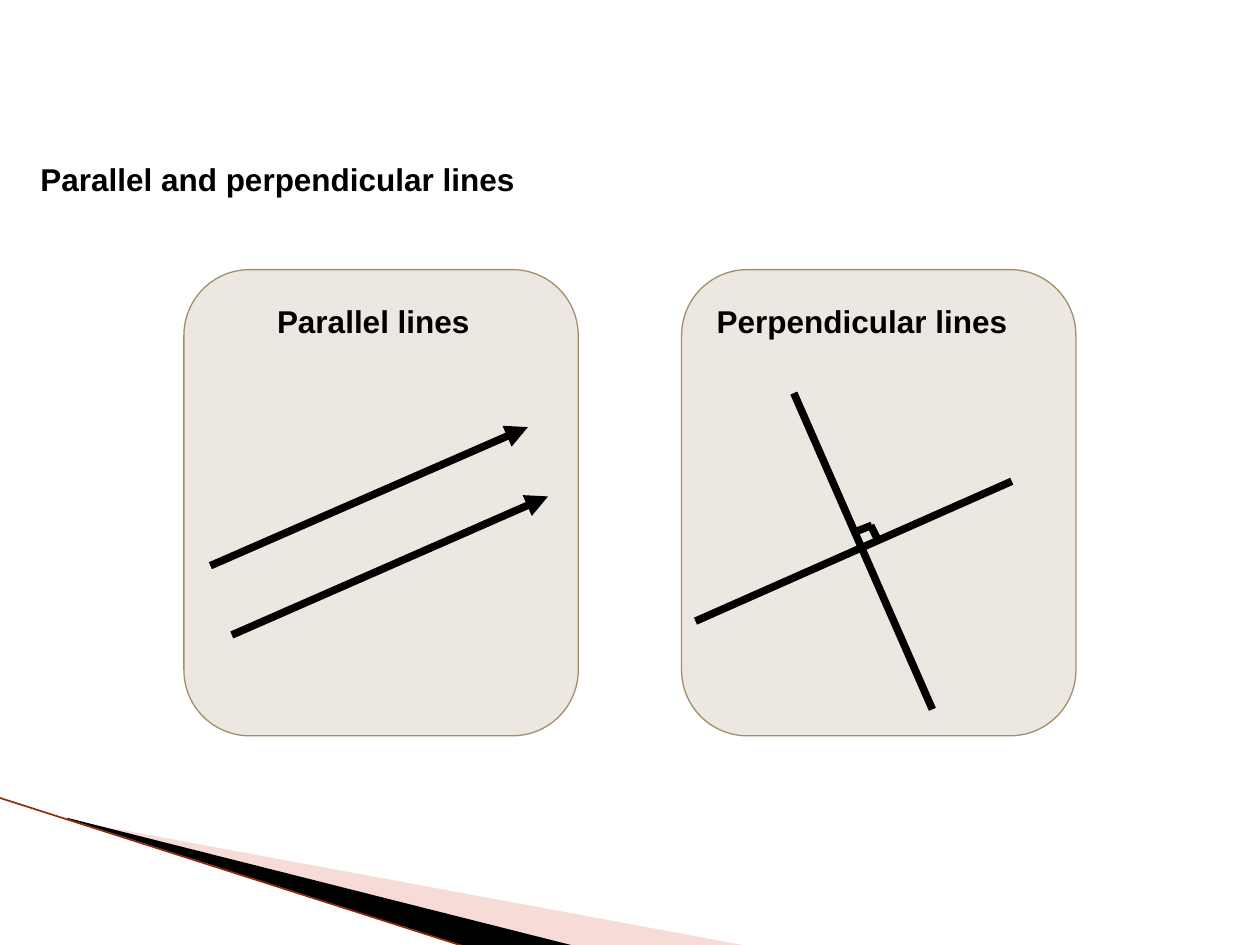
from dataclasses import dataclass

from lxml import etree
from pptx import Presentation
from pptx.dml.color import RGBColor
from pptx.enum import shapes, text
from pptx.oxml import ns
from pptx.util import Inches, Pt


@dataclass(frozen=True)
class Theme:
    ink: RGBColor = RGBColor.from_string("000000")
    card: RGBColor = RGBColor.from_string("ECE8E1")
    border: RGBColor = RGBColor.from_string("A28E6A")
    blush: RGBColor = RGBColor.from_string("E9A59D")
    rust: RGBColor = RGBColor.from_string("8E2B10")
    font: str = "Arial"
    label_size: Pt = Pt(18)
    thick: Pt = Pt(4.33)
    thin: Pt = Pt(0.75)
    edge: Pt = Pt(0.95)


THEME = Theme()


def set_all(target, values):
    for name, value in values.items():
        setattr(target, name, value)


def fill_label(shape, wording):
    frame = shape.text_frame
    set_all(frame, {
        "word_wrap": False,
        "auto_size": text.MSO_AUTO_SIZE.SHAPE_TO_FIT_TEXT,
        "vertical_anchor": text.MSO_ANCHOR.TOP,
    })
    para = frame.paragraphs[0]
    set_all(para, {"alignment": text.PP_ALIGN.LEFT, "line_spacing": 1.0, "space_before": Pt(0)})
    span = para.add_run()
    span.text = wording
    set_all(span.font, {"name": THEME.font, "size": THEME.label_size, "bold": True})
    span.font.color.rgb = THEME.ink


def add_line(parent, start, end, color, width, arrow=False):
    points = [Inches(value) for value in (*start, *end)]
    line = parent.add_connector(shapes.MSO_CONNECTOR.STRAIGHT, *points)
    line.line.color.rgb = color
    line.line.width = width
    if arrow:
        etree.SubElement(line.line._get_or_add_ln(), ns.qn("a:tailEnd"), type="triangle")
    etree.SubElement(line._element.spPr, ns.qn("a:effectLst"))


def add_wedge(page, points, color, opacity=100):
    corners = [(Inches(x), Inches(y)) for x, y in points]
    builder = page.shapes.build_freeform(*corners[0])
    builder.add_line_segments(corners[1:], close=True)
    wedge = builder.convert_to_shape()
    wedge.shadow.inherit = False
    wedge.fill.solid()
    wedge.fill.fore_color.rgb = color
    wedge.line.fill.background()
    if opacity < 100:
        tint = wedge._element.spPr.find(".//" + ns.qn("a:srgbClr"))
        etree.SubElement(tint, ns.qn("a:alpha"), val=str(opacity * 1000))


def add_corner_sweep(page, box):
    left, top, width, height = box
    right, bottom = left + width, top + height
    add_wedge(page, [(left + 0.56, top + 0.18), (right, bottom),
                     (right - 1.39, bottom), (left + 0.56, top + 0.17)], THEME.blush, 40)
    add_wedge(page, [(left + 0.54, top + 0.16), (right - 1.38, bottom),
                     (right - 2.23, bottom + 0.01), (left + 0.55, top + 0.17)], THEME.ink)
    add_line(page.shapes, (left, top), (right - 2.24, bottom + 0.01), THEME.rust, THEME.edge)


def add_heading(page, box, wording):
    title = page.shapes.title
    set_all(title, dict(zip(("left", "top", "width", "height"), map(Inches, box))))
    fill_label(title, wording)


def add_card(page, box, wording, label_left, label_width, strokes, arrow=False):
    left, top = box[:2]
    group = page.shapes.add_group_shape().shapes
    card = group.add_shape(shapes.MSO_SHAPE.ROUNDED_RECTANGLE, *map(Inches, box))
    card.shadow.inherit = False
    card.fill.solid()
    card.fill.fore_color.rgb = THEME.card
    card.line.color.rgb = THEME.border
    card.line.width = THEME.thin
    label = group.add_textbox(Inches(left + label_left), Inches(top + 0.21),
                              Inches(label_width), Inches(0.4))
    fill_label(label, wording)
    for x1, y1, x2, y2 in strokes:
        add_line(group, (left + x1, top + y1), (left + x2, top + y2),
                 THEME.ink, THEME.thick, arrow)


def main():
    deck = Presentation()
    set_all(deck, {"slide_width": Inches(10), "slide_height": Inches(7.5)})
    page = deck.slides.add_slide(deck.slide_layouts[5])
    add_corner_sweep(page, (-0.01, 6.33, 5.96, 1.18))
    add_heading(page, (0.22, 1.22, 4, 0.4), "Parallel and perpendicular lines")
    parallel = [(0.21, 2.35, 2.73, 1.25), (0.38, 2.9, 2.89, 1.8)]
    crossing = [(0.11, 2.79, 2.62, 1.68), (1.99, 3.49, 0.89, 0.98)]
    right_angle = [(1.56, 2.15, 1.5, 2.03), (1.38, 2.08, 1.51, 2.03)]
    add_card(page, (1.46, 2.14, 3.13, 3.7), "Parallel lines", 0.64, 1.75, parallel, arrow=True)
    add_card(page, (5.41, 2.14, 3.13, 3.7), "Perpendicular lines", 0.18, 2.53,
             crossing + right_angle)
    deck.save("out.pptx")


if __name__ == "__main__":
    main()
